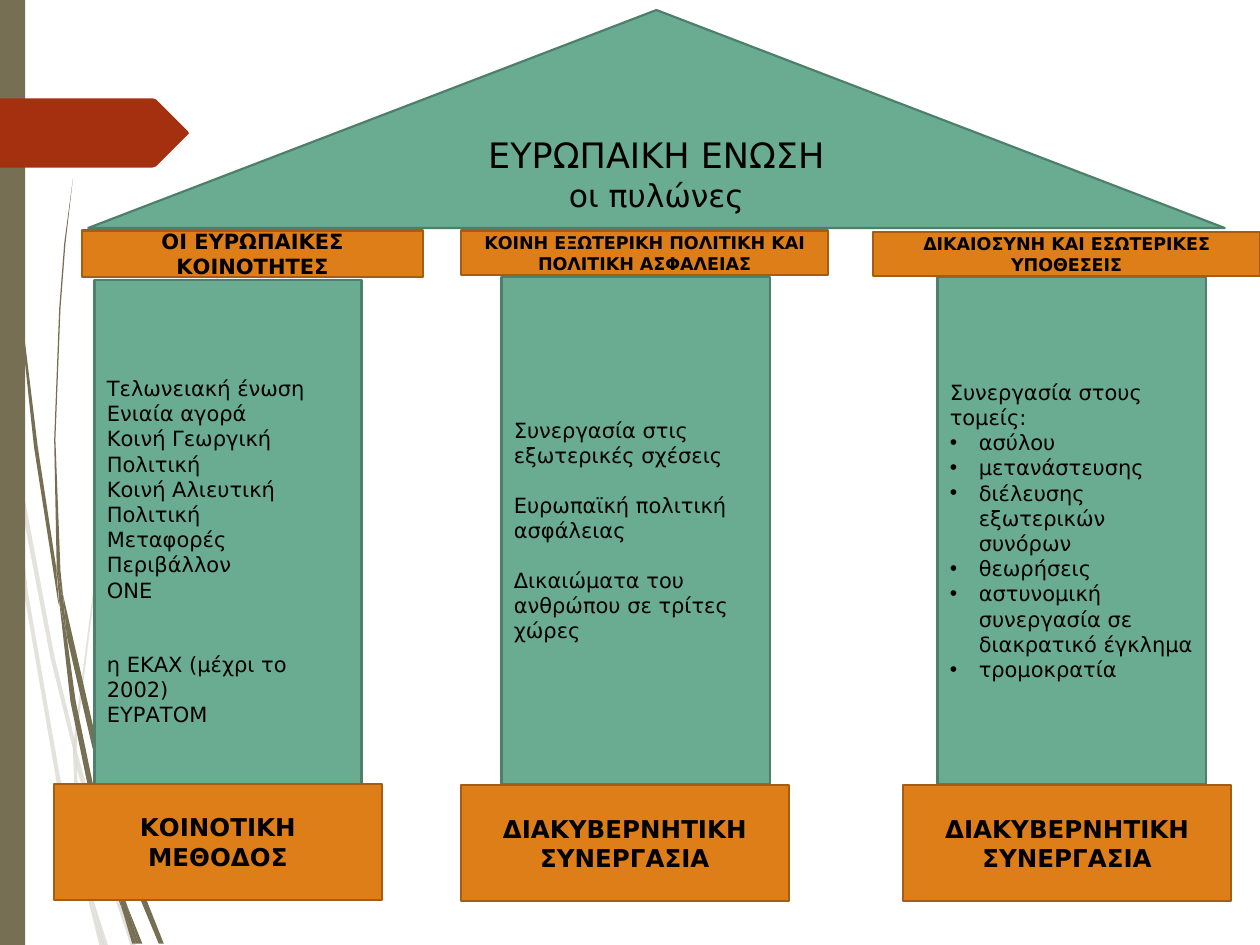
from lxml import etree
from pptx import Presentation
from pptx.dml.color import RGBColor
from pptx.enum.shapes import MSO_SHAPE
from pptx.enum.text import MSO_ANCHOR, PP_ALIGN
from pptx.oxml.ns import qn
from pptx.util import Inches, Pt

RECT, ROOF = MSO_SHAPE.RECTANGLE, MSO_SHAPE.ISOSCELES_TRIANGLE
MIDDLE = MSO_ANCHOR.MIDDLE
LEFT, CENTER = PP_ALIGN.LEFT, PP_ALIGN.CENTER
FONT = "DejaVu Sans"
BLACK = RGBColor(0, 0, 0)
OLIVE = RGBColor(0x76, 0x6F, 0x54)
RED = RGBColor(0xA5, 0x30, 0x10)
GREEN = RGBColor(0x6A, 0xAC, 0x91)
MOSS = RGBColor(0x4E, 0x7F, 0x6B)
ORANGE = RGBColor(0xDE, 0x7E, 0x18)
BROWN = RGBColor(0xA4, 0x5D, 0x12)

# Outlines of the grass blades, in hundredths of an inch.
PALE = [
    [(8, 350), (6, 322), (0, 282), (0, 299), (7, 344)],
    [(40, 522), (59, 599), (59, 586), (43, 520), (10, 345), (12, 376)],
    [(64, 607), (61, 596), (61, 610), (85, 694), (104, 751), (108, 751),
     (88, 692)],
    [(83, 751), (86, 751), (73, 711)],
    [(64, 683), (48, 619), (22, 469), (12, 376), (8, 350), (19, 470),
     (45, 621), (64, 693), (70, 714), (69, 707)],
    [(58, 599), (60, 646), (64, 683), (67, 692), (73, 711), (72, 706),
     (63, 646), (61, 610), (61, 608)],
    [(61, 584), (76, 462), (111, 349), (159, 245), (187, 198), (201, 175),
     (217, 154), (217, 153), (201, 175), (186, 197), (158, 244), (110, 348),
     (75, 461), (59, 584), (59, 586), (61, 596)],
    [(70, 714), (79, 751), (82, 751)],
    [(61, 608), (61, 610), (61, 596), (59, 586), (58, 599)],
    [(67, 692), (65, 683), (69, 707), (70, 714), (82, 751), (83, 751),
     (73, 711)],
]
DARK = [
    [(5, 110), (14, 233), (27, 355), (46, 477), (47, 481), (45, 457),
     (45, 453), (30, 355), (15, 232), (6, 109), (4, 48), (3, 0), (2, 0),
     (3, 48)],
    [(73, 592), (88, 645), (88, 633), (88, 631), (77, 590), (50, 472),
     (53, 505)],
    [(94, 649), (91, 641), (91, 656), (109, 708), (126, 749), (130, 749),
     (113, 706)],
    [(91, 691), (81, 657), (60, 556), (53, 505), (47, 477), (56, 557),
     (77, 659), (92, 708), (97, 722), (96, 717)],
    [(50, 472), (48, 453), (44, 349), (48, 245), (52, 193), (58, 141),
     (51, 193), (47, 245), (43, 349), (45, 449), (49, 472)],
    [(110, 749), (113, 749), (101, 719)],
    [(47, 477), (53, 505), (50, 472), (49, 472), (45, 449), (45, 453)],
    [(91, 633), (103, 552), (131, 476), (169, 406), (191, 374), (203, 359),
     (216, 344), (215, 344), (203, 358), (191, 373), (168, 405), (129, 474),
     (101, 551), (88, 631), (91, 641)],
    [(97, 722), (105, 749), (108, 749)],
    [(88, 645), (91, 691), (96, 706), (101, 719), (100, 716), (91, 656),
     (90, 651)],
    [(96, 706), (91, 691), (96, 717), (97, 722), (108, 749), (110, 749),
     (101, 719)],
]
ARROW = [(149, 107), (124, 132), (121, 133), (0, 133), (0, 78), (121, 78),
         (124, 79), (149, 104), (150, 106)]

# Each line is (text, space before in points, bulleted).
COLUMNS = [
    dict(pillar=(0.75, 2.22, 2.12, 4.02), cap=(0.65, 1.83, 2.71, 0.37),
         base=(0.43, 6.22, 2.6, 0.92), size=12, inset=(0.63, 0.34),
         head="ΟΙ ΕΥΡΩΠΑΙΚΕΣ ΚΟΙΝΟΤΗΤΕΣ", foot="ΚΟΙΝΟΤΙΚΗ ΜΕΘΟΔΟΣ",
         lines=[("Τελωνειακή ένωση", 0, False), ("Ενιαία αγορά", 0, False),
                ("Κοινή Γεωργική Πολιτική", 0, False),
                ("Κοινή Αλιευτική Πολιτική", 0, False),
                ("Μεταφορές", 0, False), ("Περιβάλλον", 0, False),
                ("ΟΝΕ", 0, False), ("η ΕΚΑΧ (μέχρι το 2002)", 28, False),
                ("ΕΥΡΑΤΟΜ", 0, False)]),
    dict(pillar=(3.98, 2.2, 2.13, 4.02), cap=(3.66, 1.83, 2.91, 0.35),
         base=(3.66, 6.23, 2.6, 0.92), size=10, inset=(0.05, 0.05),
         head="ΚΟΙΝΗ ΕΞΩΤΕΡΙΚΗ ΠΟΛΙΤΙΚΗ ΚΑΙ ΠΟΛΙΤΙΚΗ ΑΣΦΑΛΕΙΑΣ",
         foot="ΔΙΑΚΥΒΕΡΝΗΤΙΚΗ ΣΥΝΕΡΓΑΣΙΑ",
         lines=[("Συνεργασία στις εξωτερικές σχέσεις", 0, False),
                ("Ευρωπαϊκή πολιτική ασφάλειας", 14, False),
                ("Δικαιώματα του ανθρώπου σε τρίτες χώρες", 14, False)]),
    dict(pillar=(7.44, 2.2, 2.13, 4.02), cap=(6.93, 1.84, 3.07, 0.35),
         base=(7.17, 6.23, 2.6, 0.92), size=10, inset=(0.05, 0.05),
         head="ΔΙΚΑΙΟΣΥΝΗ ΚΑΙ ΕΣΩΤΕΡΙΚΕΣ ΥΠΟΘΕΣΕΙΣ",
         foot="ΔΙΑΚΥΒΕΡΝΗΤΙΚΗ ΣΥΝΕΡΓΑΣΙΑ",
         lines=[("Συνεργασία στους τομείς:", 0, False), ("ασύλου", 0, True),
                ("μετανάστευσης", 0, True),
                ("διέλευσης εξωτερικών συνόρων", 0, True),
                ("θεωρήσεις", 0, True),
                ("αστυνομική συνεργασία σε διακρατικό έγκλημα", 0, True),
                ("τρομοκρατία", 0, True)]),
]


def paint(shape, fill, line=None):
    shape.shadow.inherit = False
    shape.fill.solid()
    shape.fill.fore_color.rgb = fill
    if line is None:
        shape.line.fill.background()
    else:
        shape.line.color.rgb = line
        shape.line.width = Pt(1.25)


def add_block(slide, kind, box, fill, line=None):
    shape = slide.shapes.add_shape(kind, *map(Inches, box))
    paint(shape, fill, line)
    frame = shape.text_frame
    frame.word_wrap = True
    frame.vertical_anchor = MIDDLE
    return shape


def add_line(para, text, size, align, bold=False):
    para.text = text
    para.alignment = align
    font = para.runs[0].font
    font.name, font.size, font.bold = FONT, Pt(size), bold
    font.color.rgb = BLACK


def add_bullet(para):
    props = para._p.get_or_add_pPr()
    props.set("marL", str(Inches(0.23)))
    props.set("indent", str(Inches(-0.23)))
    etree.SubElement(props, qn("a:buFont")).set("typeface", "Arial")
    etree.SubElement(props, qn("a:buChar")).set("char", "•")


def add_outline(shapes, points, fill):
    """Draw a closed shape from points in hundredths of an inch."""
    pen = shapes.build_freeform(*points[0], scale=Inches(0.01))
    pen.add_line_segments(points[1:], close=True)
    shape = pen.convert_to_shape()
    paint(shape, fill)
    return shape


def add_decor(slide):
    pale = slide.shapes.add_group_shape()
    for points in PALE:
        blade = add_outline(pale.shapes, points, OLIVE)
        tint = blade.fill._xPr.find(".//" + qn("a:srgbClr"))
        etree.SubElement(tint, qn("a:alpha")).set("val", "20000")
    dark = slide.shapes.add_group_shape()
    for points in DARK:
        add_outline(dark.shapes, points, OLIVE)
    add_block(slide, RECT, (0, 0, 0.2, 7.5), OLIVE)
    add_outline(slide.shapes, ARROW, RED)


def add_roof(slide, box):
    frame = add_block(slide, ROOF, box, GREEN, MOSS).text_frame
    add_line(frame.paragraphs[0], "ΕΥΡΩΠΑΙΚΗ ΕΝΩΣΗ", 20, CENTER)
    add_line(frame.add_paragraph(), "οι πυλώνες", 18, CENTER)


def add_pillar(slide, box, lines, inset):
    frame = add_block(slide, RECT, box, GREEN, MOSS).text_frame
    frame.margin_top, frame.margin_bottom = map(Inches, inset)
    for i, (text, gap, bullet) in enumerate(lines):
        para = frame.add_paragraph() if i else frame.paragraphs[0]
        if gap:
            para.space_before = Pt(gap)
        if bullet:
            add_bullet(para)
        add_line(para, text, 12, LEFT)


def add_label(slide, box, text, size):
    frame = add_block(slide, RECT, box, ORANGE, BROWN).text_frame
    add_line(frame.paragraphs[0], text, size, CENTER, bold=True)


def main():
    deck = Presentation()
    deck.slide_width, deck.slide_height = Inches(10), Inches(7.5)
    slide = deck.slides.add_slide(deck.slide_layouts[6])
    add_decor(slide)
    add_roof(slide, (0.7, 0.08, 9.02, 1.73))
    for col in COLUMNS:
        add_pillar(slide, col["pillar"], col["lines"], col["inset"])
        add_label(slide, col["cap"], col["head"], col["size"])
        add_label(slide, col["base"], col["foot"], 14)
    deck.save("out.pptx")


if __name__ == "__main__":
    main()
